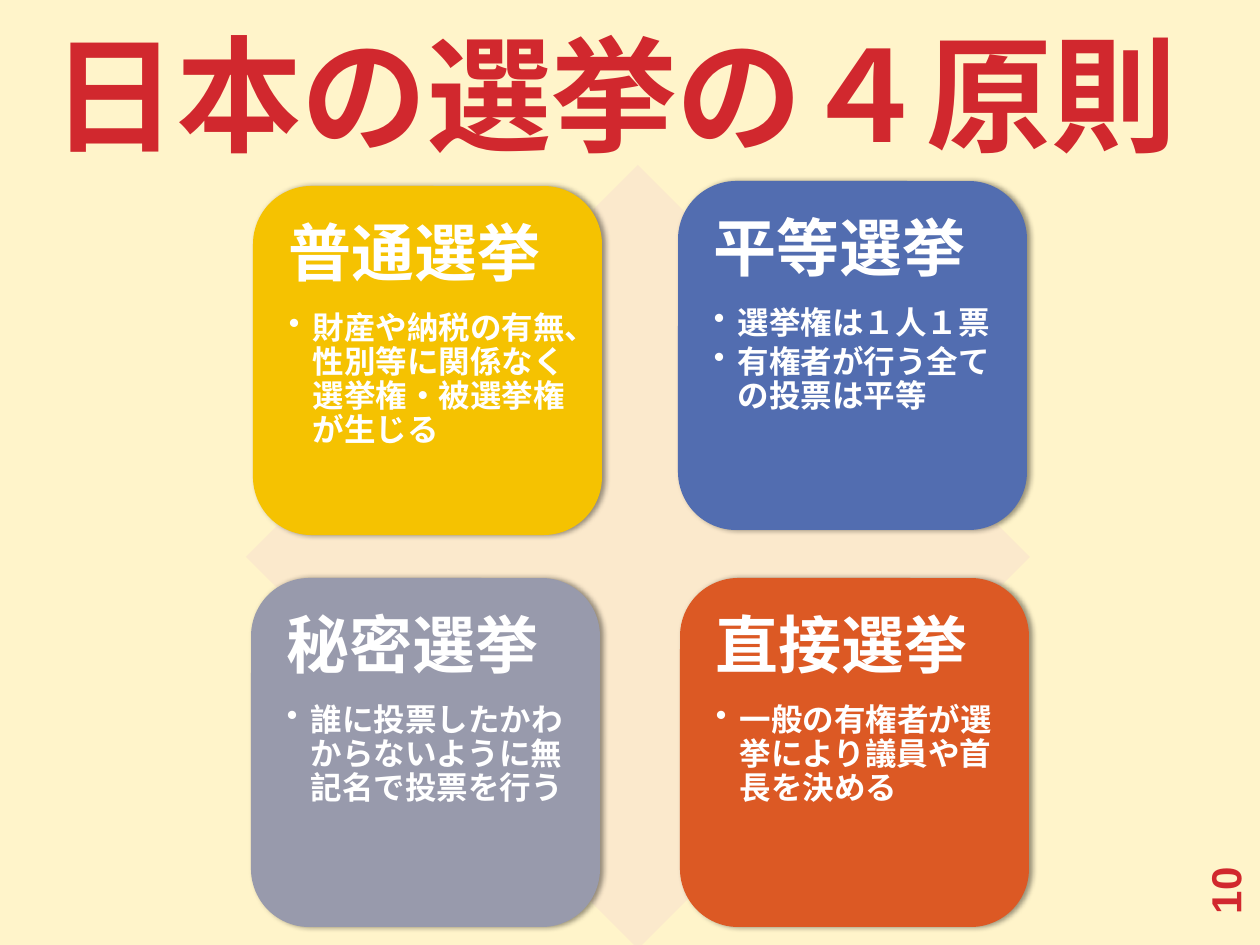
import pptx
import pptx.util
import pptx.dml.color
import pptx.enum.shapes
import pptx.enum.text
from dataclasses import dataclass
from lxml import etree
from pptx.oxml.ns import qn

# Content: card left, top, colour, heading, points
TITLE = "日本の選挙の４原則"
PAGE_NUMBER = "10"
CARDS = [
    (253, 186, "F5C201", "普通選挙", ["財産や納税の有無、性別等に関係なく選挙権・被選挙権が生じる"]),
    (678, 181, "526DB0", "平等選挙", ["選挙権は１人１票", "有権者が行う全ての投票は平等"]),
    (251, 578, "989AAC", "秘密選挙", ["誰に投票したかわからないように無記名で投票を行う"]),
    (680, 578, "DC5924", "直接選挙", ["一般の有権者が選挙により議員や首長を決める"]),
]


@dataclass(frozen=True)
class Theme:
    background: str = "FFF4CA"
    diamond: str = "FBE9CC"
    accent: str = "D1282E"
    light: str = "FFFFFF"
    shadow: str = "000000"
    font: str = "Noto Sans CJK JP"
    number_font: str = "Arial"
    title_size: int = 72
    heading_size: int = 36
    point_size: int = 18
    number_size: int = 24


THEME = Theme()
EMU_PER_PX = 914400 / 126
CARD_SIZE, CARD_MARGIN, TEXT_INSET, POINT_INDENT = 349, 17, 19, 24
SHAPES = pptx.enum.shapes.MSO_SHAPE
ANCHOR = pptx.enum.text.MSO_ANCHOR


def px(*lengths):
    return [round(length * EMU_PER_PX) for length in lengths]


def rgb(colour):
    return pptx.dml.color.RGBColor.from_string(colour)


def child(parent, tag, **attributes):
    return etree.SubElement(parent, qn(tag), attributes)


def add_filled_shape(slide, kind, box, colour):
    shape = slide.shapes.add_shape(kind, *px(*box))
    shape.shadow.inherit = False
    shape.fill.solid()
    shape.fill.fore_color.rgb = rgb(colour)
    shape.line.fill.background()
    return shape


def add_card_shadow(shape):
    effects = shape._element.spPr.find(qn("a:effectLst"))
    shadow = child(effects, "a:outerShdw", blurRad=str(pptx.util.Pt(3.1)),
                   dist=str(pptx.util.Pt(1.8)), dir="0", rotWithShape="0")
    colour = child(shadow, "a:srgbClr", val=THEME.shadow)
    child(colour, "a:alpha", val="40000")


def add_text_box(slide, box, anchor, inset=None):
    text_box = slide.shapes.add_textbox(*px(*box))
    frame = text_box.text_frame
    frame.word_wrap = True
    frame.vertical_anchor = anchor
    if inset is not None:
        frame.margin_left, frame.margin_top, frame.margin_right, frame.margin_bottom = px(*[inset] * 4)
    return text_box


def add_run(paragraph, text, size, colour, font=THEME.font):
    run = paragraph.add_run()
    run.text = text
    run.font.size = pptx.util.Pt(size)
    run.font.bold = True
    run.font.color.rgb = rgb(colour)
    run.font.name = font
    child(run._r.get_or_add_rPr(), "a:ea", typeface=font)
    return run


def set_spacing(paragraph, after_percent):
    paragraph.line_spacing = 0.9
    properties = paragraph._p.get_or_add_pPr()
    child(child(properties, "a:spcAft"), "a:spcPct", val=str(after_percent * 1000))
    return properties


def add_card(slide, left, top, colour, heading, points):
    card = add_filled_shape(slide, SHAPES.ROUNDED_RECTANGLE, (left, top, CARD_SIZE, CARD_SIZE), colour)
    add_card_shadow(card)
    text_size = CARD_SIZE - 2 * CARD_MARGIN
    box = (left + CARD_MARGIN, top + CARD_MARGIN, text_size, text_size)
    frame = add_text_box(slide, box, ANCHOR.TOP, TEXT_INSET).text_frame
    paragraph = frame.paragraphs[0]
    set_spacing(paragraph, 35)
    add_run(paragraph, heading, THEME.heading_size, THEME.light)
    indent = px(POINT_INDENT)[0]
    for point in points:
        paragraph = frame.add_paragraph()
        paragraph.level = 1
        properties = set_spacing(paragraph, 15)
        properties.set("marL", str(indent))
        properties.set("indent", str(-indent))
        child(properties, "a:buChar", char="•")
        add_run(paragraph, point, THEME.point_size, THEME.light)


def main():
    presentation = pptx.Presentation()
    presentation.slide_width, presentation.slide_height = px(1260, 945)
    slide = presentation.slides.add_slide(presentation.slide_layouts[6])
    slide.background.fill.solid()
    slide.background.fill.fore_color.rgb = rgb(THEME.background)

    # Title
    title = add_text_box(slide, (39, 16, 1182, 158), ANCHOR.BOTTOM)
    run = add_run(title.text_frame.paragraphs[0], TITLE, THEME.title_size, THEME.accent)
    run._r.get_or_add_rPr().set("spc", "-60")

    # Diamond with the four principles
    add_filled_shape(slide, SHAPES.DIAMOND, (246, 165, 784, 784), THEME.diamond)
    for card in CARDS:
        add_card(slide, *card)

    # Page number
    number = add_text_box(slide, (1134, 811, 181, 50), ANCHOR.MIDDLE)
    number.rotation = 270
    add_run(number.text_frame.paragraphs[0], PAGE_NUMBER, THEME.number_size,
            THEME.accent, THEME.number_font)

    presentation.save("out.pptx")


if __name__ == "__main__":
    main()
